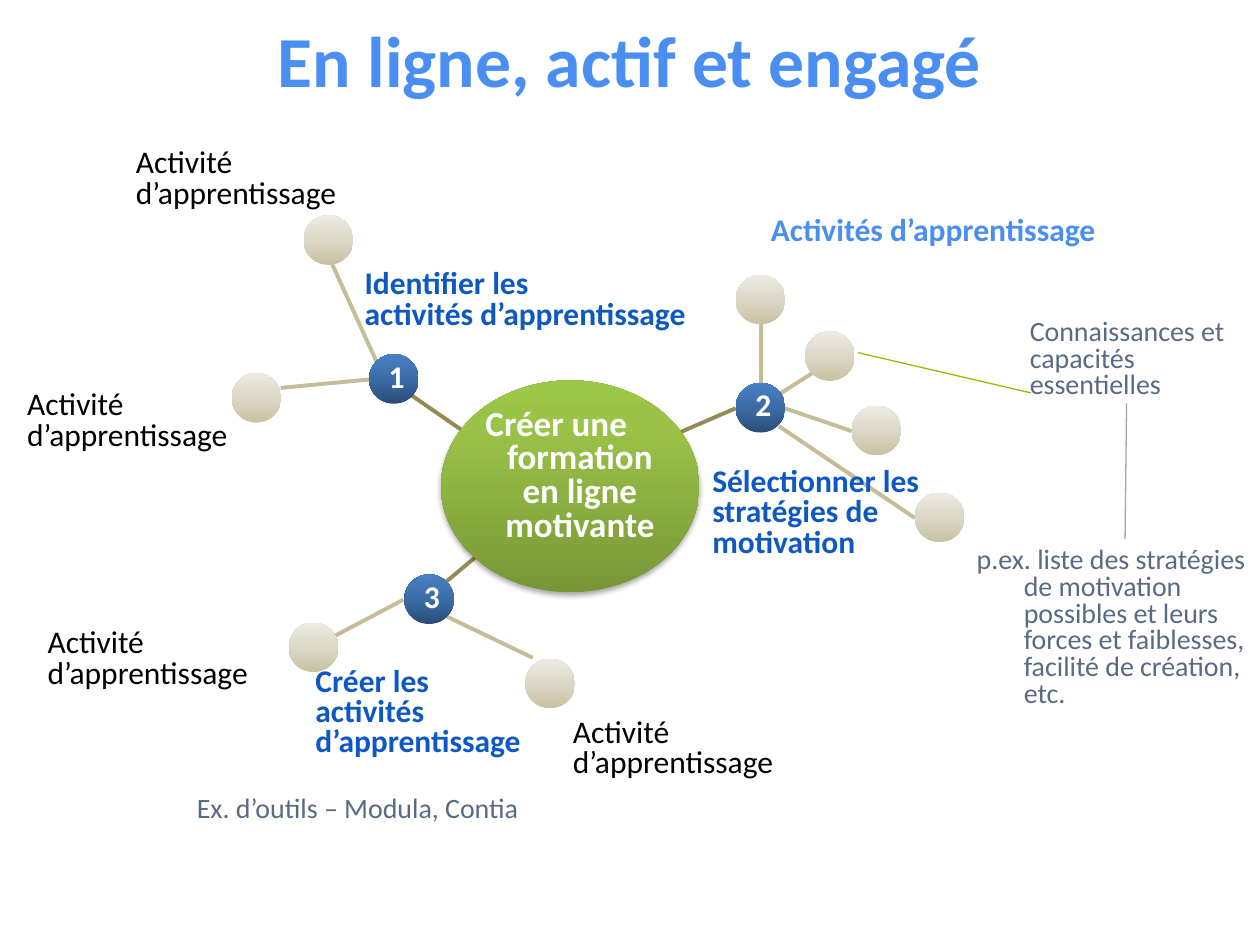
import copy

import pptx
import pptx.dml.color
import pptx.enum.shapes
import pptx.enum.text
import pptx.oxml
import pptx.oxml.ns
import pptx.util

Cm, Pt = pptx.util.Cm, pptx.util.Pt
SHAPE = pptx.enum.shapes.MSO_SHAPE
ANCHOR = pptx.enum.text.MSO_ANCHOR
ALIGN = pptx.enum.text.PP_ALIGN
qn = pptx.oxml.ns.qn

COLORS = {
    "title": "4A8EF2", "step": "0E58C4", "note": "596A85", "label": "000000",
    "white": "FFFFFF", "trunk": "948A54", "branch": "C4BD97",
    "grey": "A6A6A6", "green": "90C100",
}
GRADIENTS = {  # bottom to top
    "step": [(0, "2A4C75"), (0.5, "3C6CA6"), (1, "4780C5")],
    "activity": [(0, "C8C1A2"), (0.5, "DCD8C7"), (1, "EDEBE3")],
    "centre": [(0, "779737"), (0.8, "9BC348"), (1, "9DC746")],
}
SHADOW = (
    '<a:outerShdw xmlns:a="http://schemas.openxmlformats.org/drawingml/2006/main"'
    ' blurRad="39370" dist="22860" dir="5400000" rotWithShape="0">'
    '<a:srgbClr val="000000"><a:alpha val="35000"/></a:srgbClr></a:outerShdw>'
)
NODE = 1  # diameter of a small circle, cm


def rgb(name):
    return pptx.dml.color.RGBColor.from_string(COLORS.get(name, name))


class MindMap:
    font = "Calibri"
    spacing = 0.8

    def __init__(self, slide):
        self.slide = slide

    def set_text(self, sp, text, size, color, bold=False, align=ALIGN.LEFT,
                 anchor=ANCHOR.TOP, hanging=False, spacing=spacing):
        tf = sp.text_frame
        tf.text = text
        tf.word_wrap = True
        tf.auto_size = pptx.enum.text.MSO_AUTO_SIZE.NONE
        tf.vertical_anchor = anchor
        for p in tf.paragraphs:
            p.alignment = align
            p.line_spacing = spacing
            p.space_before = Pt(0)
            if hanging:
                pPr = p._p.get_or_add_pPr()
                pPr.set("marL", str(Cm(0.96)))
                pPr.set("indent", str(-Cm(0.95)))
            for r in p.runs:
                r.font.name = self.font
                r.font.size = Pt(size)
                r.font.bold = bold
                r.font.color.rgb = rgb(color)

    def title(self, text, x, y, w, h):
        sp = self.slide.shapes.title
        sp.left, sp.top, sp.width, sp.height = Cm(x), Cm(y), Cm(w), Cm(h)
        self.set_text(sp, text, 41, "title", bold=True, align=ALIGN.CENTER,
                      anchor=ANCHOR.MIDDLE, spacing=1.04)

    def text(self, text, x, y, w, h, size, color, **style):
        sp = self.slide.shapes.add_textbox(Cm(x), Cm(y), Cm(w), Cm(h))
        self.set_text(sp, text, size, color, **style)

    def line(self, x1, y1, x2, y2, color, width=2.25):
        c = self.slide.shapes.add_connector(
            pptx.enum.shapes.MSO_CONNECTOR.STRAIGHT, Cm(x1), Cm(y1), Cm(x2), Cm(y2))
        c.line.color.rgb = rgb(color)
        c.line.width = Pt(width)
        spPr = c._element.spPr
        spPr.append(spPr.makeelement(qn("a:effectLst"), {}))

    def ellipse(self, x, y, w, h, gradient):
        sp = self.slide.shapes.add_shape(SHAPE.OVAL, Cm(x), Cm(y), Cm(w), Cm(h))
        sp.line.fill.background()
        sp.shadow.inherit = False
        sp.fill.gradient()
        sp.fill.gradient_angle = 90
        stops = sp._element.spPr.find(".//" + qn("a:gsLst"))
        stops.append(copy.deepcopy(stops[-1]))
        for stop, (position, color) in zip(sp.fill.gradient_stops, GRADIENTS[gradient]):
            stop.position = position
            stop.color.rgb = rgb(color)
        return sp

    def step(self, number, x, y):
        sp = self.ellipse(x, y, NODE, NODE, "step")
        self.set_text(sp, str(number), 18, "white", bold=True, align=ALIGN.CENTER,
                      anchor=ANCHOR.MIDDLE)

    def centre(self, x, y, w, h):
        sp = self.ellipse(x, y, w, h, "centre")
        effects = sp._element.spPr.find(qn("a:effectLst"))
        effects.append(pptx.oxml.parse_xml(SHADOW))


TRUNKS = [(13, 9.02, 14.83, 8.23), (9.98, 10.9, 8.99, 11.73), (9.7, 8.94, 8.31, 7.98)]
BRANCHES = [
    (7.59, 7.29, 6.63, 5.18), (7.44, 7.65, 5.66, 7.82),
    (15.34, 8.18, 16.38, 7.52), (15.34, 7.72, 15.34, 6.53),
    (15.82, 8.23, 17.17, 8.69), (15.7, 8.59, 18.44, 10.44),
    (8.13, 12.09, 5.97, 13.23), (8.99, 12.42, 10.74, 13.26),
]
STEPS = [(7.44, 7.14), (14.83, 7.72), (8.15, 11.58)]
ACTIVITIES = [
    (6.12, 4.34), (4.67, 7.52),
    (14.83, 5.54), (16.23, 6.68), (17.17, 8.18), (18.44, 9.93),
    (5.82, 12.55), (10.59, 13.28),
]
ACTIVITY_LABELS = [
    (2.49, 2.51, 5.11, 2.24), (0.3, 7.72, 5.21, 1.57),
    (0.71, 12.52, 4.8, 1.57), (11.3, 14.33, 4.95, 1.57),
]
STEP_LABELS = [
    ("Identifier les\nactivités d’apprentissage", 7.09, 5.33, 7.19, 1.63),
    ("Sélectionner les\nstratégies de\nmotivation", 14.1, 9.32, 5, 2.24),
    ("Créer les\nactivités\nd’apprentissage", 6.1, 13.34, 5.05, 2.84),
]
NOTES = [
    ("Connaissances et\ncapacités\nessentielles", 20.5, 6.32, 5.21, 2.01),
    ("p.ex. liste des stratégies de motivation possibles et leurs forces et "
     "faiblesses, facilité de création, etc.", 19.43, 10.92, 5.97, 3.63),
    ("Ex. d’outils – Modula, Contia", 3.71, 15.95, 7.49, 0.91),
]


def main():
    prs = pptx.Presentation()
    prs.slide_width, prs.slide_height = Cm(25.4), Cm(19.05)
    s = MindMap(prs.slides.add_slide(prs.slide_layouts[5]))

    s.title("En ligne, actif et engagé", 0, 0.18, 25.4, 1.93)
    for ends in BRANCHES:
        s.line(*ends, "branch")
    for ends in TRUNKS:
        s.line(*ends, "trunk")
    s.line(22.71, 8.13, 22.68, 10.87, "grey", 0.75)
    s.line(17.3, 7.11, 20.78, 7.92, "green", 0.75)

    for x, y in ACTIVITIES:
        s.ellipse(x, y, NODE, NODE, "activity")
    for number, (x, y) in enumerate(STEPS, 1):
        s.step(number, x, y)
    s.centre(8.89, 7.67, 5.21, 4.27)
    s.text("Créer une formation en ligne motivante", 8.71, 8.13, 5, 3.12, 20, "white",
           bold=True, align=ALIGN.CENTER, hanging=True)

    for box in ACTIVITY_LABELS:
        s.text("Activité d’apprentissage", *box, 18, "label", anchor=ANCHOR.MIDDLE)
    s.text("Activités d’apprentissage", 15.29, 4.11, 7.92, 1.14, 18, "title",
           bold=True, anchor=ANCHOR.MIDDLE)
    for label in STEP_LABELS:
        s.text(*label, 18, "step", bold=True, hanging=True)
    for note in NOTES:
        s.text(*note, 16, "note", hanging=True)

    prs.save("out.pptx")


if __name__ == "__main__":
    main()
